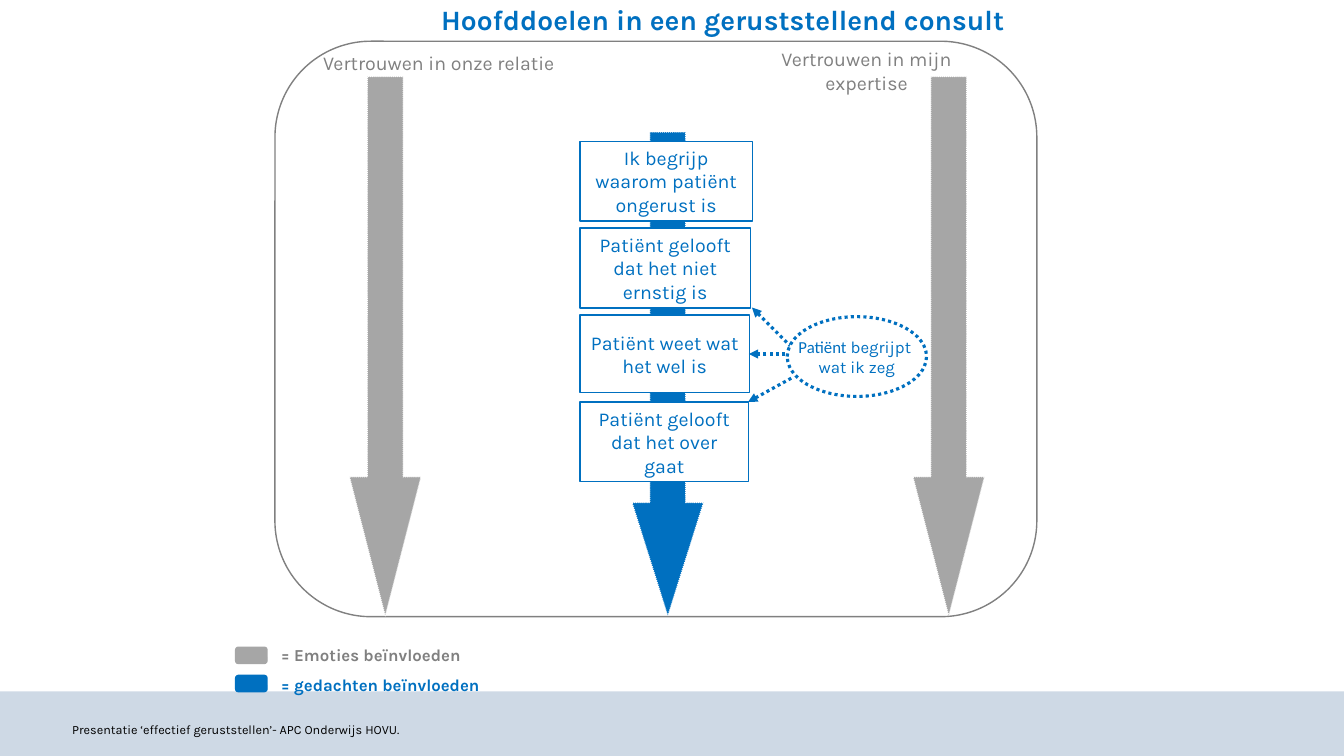
from dataclasses import dataclass

from lxml.etree import SubElement
from pptx import Presentation
from pptx.dml.color import RGBColor
from pptx.enum.dml import MSO_LINE
from pptx.enum.shapes import MSO_CONNECTOR, MSO_SHAPE as Preset
from pptx.enum.text import MSO_ANCHOR as Anchor, PP_ALIGN as Align
from pptx.oxml.ns import qn
from pptx.util import Cm, Pt


@dataclass(frozen=True)
class Theme:
    blue: str = "0070C0"
    grey: str = "A6A6A6"
    dark_grey: str = "808080"
    white: str = "FFFFFF"
    black: str = "000000"
    band: str = "CED9E5"
    font: str = "Karla"
    fallback_font: str = "Calibri"
    title: float = 20
    label: float = 14
    small: float = 12
    footer: float = 9
    thin: float = 1
    hairline: float = 0.75
    thick: float = 2.25


THEME = Theme()


class SlideBuilder:
    def __init__(self, slide, theme):
        self.slide = slide
        self.theme = theme

    def outline(self, line, color, width, dotted=False):
        line.color.rgb = RGBColor.from_string(color)
        line.width = Pt(width)
        if dotted:
            line.dash_style = MSO_LINE.ROUND_DOT

    def fill_frame(self, frame, lines, size, color, bold=False, align=Align.LEFT,
                   anchor=Anchor.TOP, wrap=True):
        """Fill a text frame; each line is a list of (text, font name) runs."""
        for name, value in {"word_wrap": wrap, "vertical_anchor": anchor}.items():
            setattr(frame, name, value)
        for index, runs in enumerate(lines):
            paragraph = frame.paragraphs[0] if index == 0 else frame.add_paragraph()
            paragraph.alignment = align
            for text, font_name in runs:
                run = paragraph.add_run()
                run.text = text
                run.font.color.rgb = RGBColor.from_string(color)
                for name, value in {"name": font_name, "size": Pt(size), "bold": bold}.items():
                    setattr(run.font, name, value)

    def shape(self, preset, box, fill=None, line=None, width=THEME.thin, dotted=False):
        shape = self.slide.shapes.add_shape(preset, *map(Cm, box))
        shape.shadow.inherit = False
        if fill:
            shape.fill.solid()
            shape.fill.fore_color.rgb = RGBColor.from_string(fill)
        else:
            shape.fill.background()
        if line:
            self.outline(shape.line, line, width, dotted)
        else:
            shape.line.fill.background()
        return shape

    def down_arrow(self, left, top, bottom, color, head):
        """Draw a block arrow; head is its head length relative to its width."""
        theme = self.theme
        arrow = self.shape(Preset.DOWN_ARROW, (left, top, 1.8, bottom - top), color,
                           theme.white, theme.hairline, dotted=True)
        arrow.adjustments[0] = 0.5
        arrow.adjustments[1] = head

    def text(self, box, text, size, color, **style):
        frame = self.slide.shapes.add_textbox(*map(Cm, box)).text_frame
        self.fill_frame(frame, [[(text, self.theme.font)]], size, color, **style)

    def dotted_arrow(self, start, end):
        connector = self.slide.shapes.add_connector(
            MSO_CONNECTOR.STRAIGHT, *map(Cm, start + end))
        self.outline(connector.line, self.theme.blue, self.theme.thick, dotted=True)
        properties = connector._element.spPr
        SubElement(properties.find(qn("a:ln")), qn("a:tailEnd"), type="triangle")
        SubElement(properties, qn("a:effectLst"))


def build(builder):
    theme = builder.theme
    centred = {"align": Align.CENTER, "anchor": Anchor.MIDDLE}
    arrow_bottom = 15.52

    builder.shape(Preset.RECTANGLE, (0, 17.42, 33.87, 1.63), theme.band)
    builder.down_arrow(23.01, 1.93, arrow_bottom, theme.grey, 1.945)
    builder.down_arrow(15.93, 3.33, arrow_bottom, theme.blue, 1.585)

    goals = [
        ("Ik begrijp waarom patiënt ongerust is", 4.34, 2.01),
        ("Patiënt gelooft dat het niet ernstig is", 4.29, 2.01),
        ("Patiënt weet wat het wel is", 4.27, 1.96),
        ("Patiënt gelooft dat het over gaat", 4.24, 2.01),
    ]
    for index, (goal, width, height) in enumerate(goals):
        box = builder.shape(Preset.RECTANGLE, (14.62, 3.56 + 2.19 * index, width, height),
                            theme.white, theme.blue)
        builder.fill_frame(box.text_frame, [[(goal, theme.font)]], theme.label, theme.blue,
                           **centred)

    builder.shape(Preset.ROUNDED_RECTANGLE, (6.93, 1.04, 19.2, 14.5), line=theme.dark_grey)
    builder.down_arrow(8.81, 1.93, arrow_bottom, theme.grey, 1.945)
    for box, label in [
        ((7.82, 1.17, 6.48, 0.86), "Vertrouwen in onze relatie"),
        ((18.35, 1.07, 6.98, 0.86), "Vertrouwen in mijn expertise"),
    ]:
        builder.text(box, label, theme.label, theme.dark_grey, align=Align.CENTER, wrap=False)

    for start, end in [
        ((19.94, 8.74), (18.95, 7.75)),
        ((19.79, 8.92), (18.87, 8.92)),
        ((19.94, 9.53), (18.85, 10.13)),
    ]:
        builder.dotted_arrow(start, end)
    ellipse = builder.shape(Preset.OVAL, (19.84, 7.98, 3.51, 2.01), theme.white,
                            theme.blue, theme.thick, dotted=True)
    understanding = [
        [("Patiënt", theme.fallback_font), (" begrijpt ", theme.font)],
        [("wat ik zeg", theme.font)],
    ]
    builder.fill_frame(ellipse.text_frame, understanding, theme.small, theme.blue,
                       wrap=False, **centred)

    builder.text((10.87, -0.05, 16.05, 1.12), "Hoofddoelen in een geruststellend consult",
                 theme.title, theme.blue, bold=True)

    for key_top, text_top, fill, color, meaning in [
        (16.31, 16.13, theme.grey, theme.dark_grey, "= Emoties beïnvloeden"),
        (17.02, 16.89, theme.blue, theme.blue, "= gedachten beïnvloeden"),
    ]:
        builder.shape(Preset.ROUNDED_RECTANGLE, (5.94, key_top, 0.79, 0.41), fill, fill)
        builder.text((6.83, text_top, 9.7, 0.76), meaning, theme.small, color, bold=True)

    builder.text((1.57, 18.06, 9.17, 0.64),
                 "Presentatie ‘effectief geruststellen’- APC Onderwijs HOVU.",
                 theme.footer, theme.black, wrap=False)


def main():
    presentation = Presentation()
    presentation.slide_width = Cm(33.87)
    presentation.slide_height = Cm(19.05)
    slide = presentation.slides.add_slide(presentation.slide_layouts[6])
    build(SlideBuilder(slide, THEME))
    presentation.save("out.pptx")


if __name__ == "__main__":
    main()
